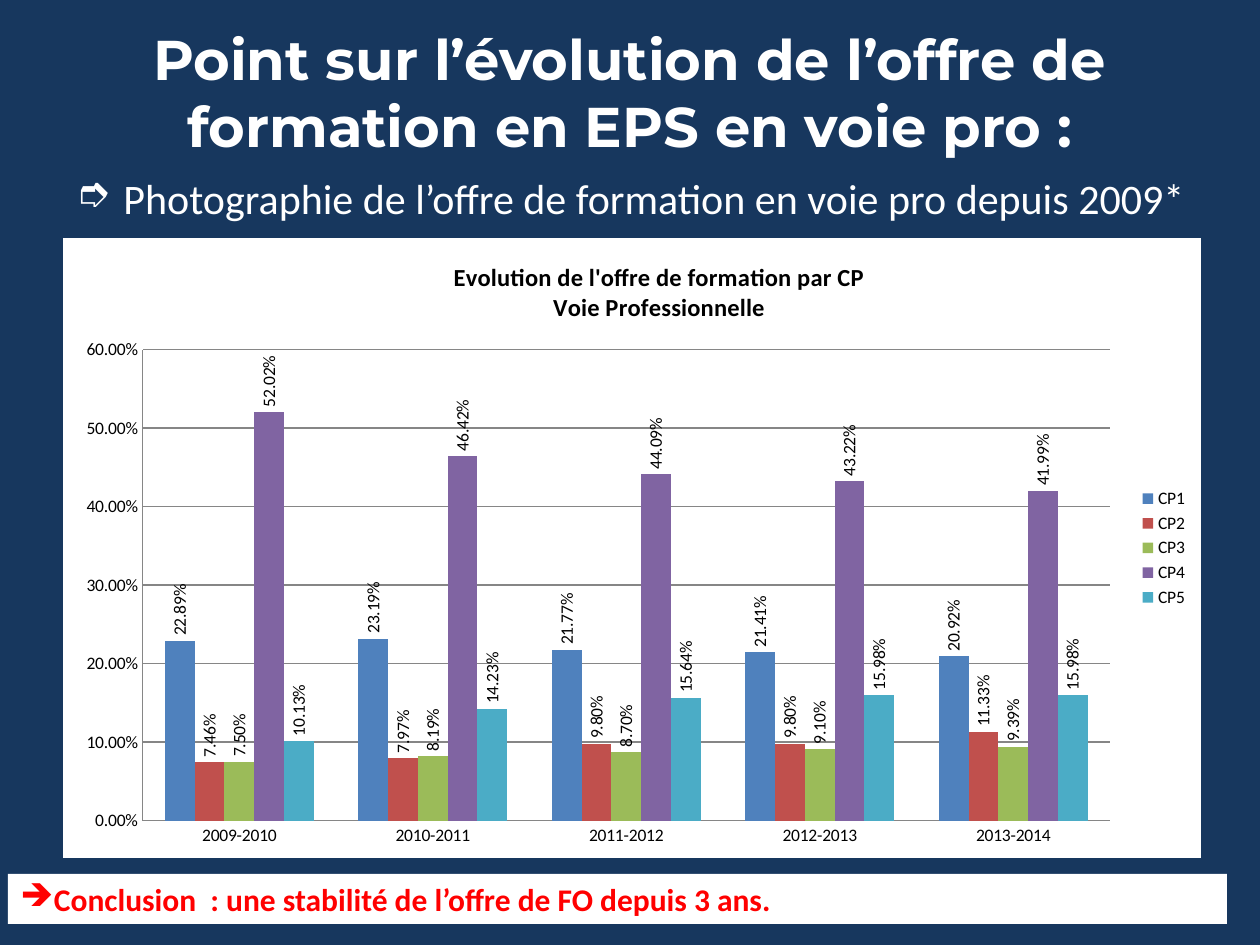
from dataclasses import dataclass

from lxml.etree import SubElement as Sub
from pptx import Presentation
from pptx.chart.data import CategoryChartData as Data
from pptx.dml.color import RGBColor as Rgb
from pptx.enum.chart import XL_CHART_TYPE as Kind, XL_LABEL_POSITION as Spot
from pptx.enum.chart import XL_LEGEND_POSITION as Side, XL_TICK_MARK as Tick
from pptx.enum.shapes import MSO_SHAPE as Form
from pptx.enum.text import MSO_ANCHOR as Anchor, MSO_AUTO_SIZE as Fit, PP_ALIGN as Align
from pptx.oxml import parse_xml
from pptx.oxml.ns import nsdecls, qn
from pptx.util import Pt

SCALE = 914400 / 126  # EMU per px


@dataclass(frozen=True)
class Theme:
    navy: str = "17375E"
    white: str = "FFFFFF"
    black: str = "000000"
    red: str = "FF0000"
    grey: str = "868686"
    bars: tuple = ("4F81BD", "C0504D", "9BBB59", "8064A2", "4BACC6")
    head: str = "Montserrat"
    body: str = "Calibri"
    title: int = 32
    lead: int = 24
    note: int = 18
    chart: int = 14
    label: int = 10


def emu(*px):
    return [round(n * SCALE) for n in px]


class Deck:
    def __init__(self, theme):
        self.theme = theme
        self.prs = Presentation()
        self.prs.slide_width, self.prs.slide_height = emu(1260, 945)
        self.slide = self.prs.slides.add_slide(self.prs.slide_layouts[5])
        fill = self.slide.background.fill
        fill.solid()
        fill.fore_color.rgb = Rgb.from_string(theme.navy)

    def font(self, font, size, color, bold=False, face=None):
        font.name = face or self.theme.body
        font.size, font.bold = Pt(size), bold
        font.color.rgb = Rgb.from_string(color)

    def run(self, para, text, *style):
        run = para.add_run()
        run.text = text
        self.font(run.font, *style)

    def bullet(self, para, mark, indent=0):
        props = para._p.get_or_add_pPr()
        left = emu(indent)[0]
        props.set("marL", str(left))
        props.set("indent", str(-left))
        Sub(props, qn("a:buChar")).set("char", mark)

    def title(self, box, text):
        shape = self.slide.shapes.title
        shape.left, shape.top, shape.width, shape.height = emu(*box)
        frame = shape.text_frame
        frame.word_wrap, frame.vertical_anchor = True, Anchor.MIDDLE
        para = frame.paragraphs[0]
        para.alignment = Align.CENTER
        self.run(para, text, self.theme.title, self.theme.white, True, self.theme.head)

    def lead(self, box, mark, text):
        frame = self.slide.shapes.add_textbox(*emu(*box)).text_frame
        frame.word_wrap = True
        para = frame.paragraphs[0]
        self.bullet(para, mark, 48)
        self.run(para, text, self.theme.lead, self.theme.white)

    def banner(self, box, mark, text):
        shape = self.slide.shapes.add_shape(Form.RECTANGLE, *emu(*box))
        shape.shadow.inherit = False
        shape.fill.solid()
        shape.fill.fore_color.rgb = Rgb.from_string(self.theme.white)
        shape.line.fill.background()
        frame = shape.text_frame
        frame.word_wrap, frame.vertical_anchor = True, Anchor.TOP
        frame.auto_size = Fit.SHAPE_TO_FIT_TEXT
        para = frame.paragraphs[0]
        para.alignment = Align.LEFT
        self.bullet(para, mark)
        self.run(para, text, self.theme.note, self.theme.red, True)

    def place(self, part, index, inner=False, **spots):
        """Give a chart part a manual layout, in shares of the chart."""
        for old in part.findall(qn("c:layout")):
            part.remove(old)
        layout = parse_xml(f"<c:layout {nsdecls('c')}><c:manualLayout/></c:layout>")
        items = [("layoutTarget", "inner")] if inner else []
        items += [("xMode", "edge"), ("yMode", "edge"), *spots.items()]
        for tag, val in items:
            Sub(layout[0], qn(f"c:{tag}")).set("val", str(val))
        part.insert(index, layout)

    def bars(self, box, lines, cats, rows):
        look = self.theme
        data = Data(number_format="0.00%")
        data.categories = cats
        for name, vals in rows.items():
            data.add_series(name, vals)
        chart = self.slide.shapes.add_chart(Kind.COLUMN_CLUSTERED, *emu(*box), data).chart
        self.font(chart.font, look.label, look.black)
        root = chart.element.find(qn("c:chart"))
        root.addnext(parse_xml(
            f'<c:spPr {nsdecls("c", "a")}><a:solidFill><a:srgbClr val="{look.white}"/>'
            "</a:solidFill><a:ln><a:noFill/></a:ln></c:spPr>"))

        # Heading and legend
        frame = chart.chart_title.text_frame
        for i, line in enumerate(lines):
            para = frame.add_paragraph() if i else frame.paragraphs[0]
            self.run(para, line, look.chart, look.black, True)
        self.place(root.find(qn("c:title")), 1, x=0.34, y=0.03)
        chart.has_legend = True
        chart.legend.position = Side.RIGHT
        chart.legend.include_in_layout = False

        # Axes
        for axis in (chart.category_axis, chart.value_axis):
            axis.major_tick_mark = axis.minor_tick_mark = Tick.NONE
            axis.format.line.color.rgb = Rgb.from_string(look.grey)
        axis.minimum_scale, axis.maximum_scale, axis.major_unit = 0, 0.6, 0.1
        axis.tick_labels.number_format = "0.00%"
        axis.tick_labels.number_format_is_linked = False
        axis.has_major_gridlines = True
        axis.major_gridlines.format.line.color.rgb = Rgb.from_string(look.grey)
        self.place(root.find(qn("c:plotArea")), 0, True, x=0.07, y=0.18, w=0.85, h=0.76)

        # Columns with upright labels
        plot = chart.plots[0]
        plot.gap_width, plot.overlap, plot.vary_by_categories = 150, 0, False
        for row, color in zip(plot.series, look.bars):
            row.format.fill.solid()
            row.format.fill.fore_color.rgb = Rgb.from_string(color)
            tags = row.data_labels
            tags.show_value, tags.position = True, Spot.OUTSIDE_END
            tags.number_format, tags.number_format_is_linked = "0.00%", False
            self.font(tags.font, look.label, look.black)
        for body in root.iterfind(f".//{qn('c:dLbls')}/{qn('c:txPr')}/{qn('a:bodyPr')}"):
            body.set("rot", "-5400000")
            body.set("vert", "horz")


def main():
    deck = Deck(Theme())

    # Heading
    deck.title((0, 0, 1260, 184), "Point sur l’évolution de l’offre de formation en EPS en voie pro :")
    deck.lead((63, 166, 1164, 746), "➮", "Photographie de l’offre de formation en voie pro depuis 2009*")

    # Conclusion
    deck.banner((8, 874, 1219, 50), "➔", "Conclusion  : une stabilité de l’offre de FO depuis 3 ans.")

    # Chart
    deck.bars(
        (63, 238, 1138, 620),
        ("Evolution de l'offre de formation par CP", "Voie Professionnelle"),
        [f"{year}-{year + 1}" for year in range(2009, 2014)],
        {
            "CP1": (0.2289, 0.2319, 0.2177, 0.2141, 0.2092),
            "CP2": (0.0746, 0.0797, 0.098, 0.098, 0.1133),
            "CP3": (0.075, 0.0819, 0.087, 0.091, 0.0939),
            "CP4": (0.5202, 0.4642, 0.4409, 0.4322, 0.4199),
            "CP5": (0.1013, 0.1423, 0.1564, 0.1598, 0.1598),
        },
    )
    deck.prs.save("out.pptx")


if __name__ == "__main__":
    main()
